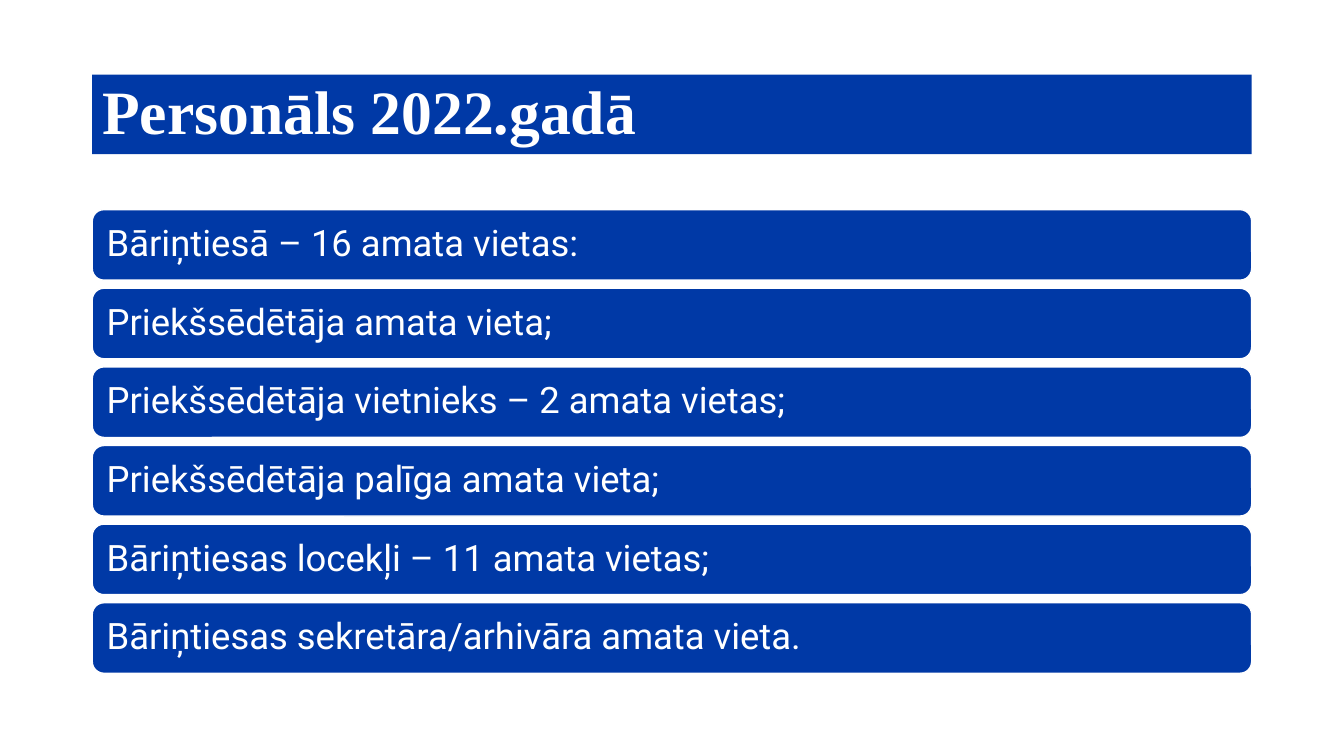
from pptx import Presentation
from pptx.dml.color import RGBColor
from pptx.enum.shapes import MSO_SHAPE
from pptx.enum.text import MSO_ANCHOR, PP_ALIGN
from pptx.util import Inches, Pt

# Content
TITLE = "Personāls 2022.gadā"
POSITIONS = [
    "Bāriņtiesā – 16 amata vietas:",
    "Priekšsēdētāja amata vieta;",
    "Priekšsēdētāja vietnieks – 2 amata vietas;",
    "Priekšsēdētāja palīga amata vieta;",
    "Bāriņtiesas locekļi – 11 amata vietas;",
    "Bāriņtiesas sekretāra/arhivāra amata vieta.",
]
COLORS = {"blue": "0039A6", "white": "FFFFFF"}

# Grid in inches
SLIDE_WIDTH, SLIDE_HEIGHT = 13.33, 7.5
BAR_WIDTH = 11.5
LEFT = (SLIDE_WIDTH - BAR_WIDTH) / 2
TITLE_TOP, TITLE_HEIGHT = 0.74, 0.79
FIRST_ROW, ROW_STEP, ROW_HEIGHT = 2.08, 0.78, 0.7


def color(name):
    return RGBColor.from_string(COLORS[name])


def add_bar(slide, kind, top, height, text, font, size, bold=False, inset=(0.1, 0.05)):
    shape = slide.shapes.add_shape(
        kind, Inches(LEFT), Inches(top), Inches(BAR_WIDTH), Inches(height))
    shape.shadow.inherit = False
    shape.fill.solid()
    shape.fill.fore_color.rgb = color("blue")
    shape.line.fill.background()

    frame = shape.text_frame
    frame.word_wrap = True
    frame.vertical_anchor = MSO_ANCHOR.MIDDLE
    frame.margin_left = frame.margin_right = Inches(inset[0])
    frame.margin_top = frame.margin_bottom = Inches(inset[1])
    paragraph = frame.paragraphs[0]
    paragraph.alignment = PP_ALIGN.LEFT
    paragraph.line_spacing = 0.9
    run = paragraph.add_run()
    run.text = text
    run.font.name = font
    run.font.size = Pt(size)
    run.font.bold = bold
    run.font.color.rgb = color("white")
    return shape


def main():
    presentation = Presentation()
    presentation.slide_width = Inches(SLIDE_WIDTH)
    presentation.slide_height = Inches(SLIDE_HEIGHT)
    slide = presentation.slides.add_slide(presentation.slide_layouts[6])

    # Title band
    add_bar(slide, MSO_SHAPE.RECTANGLE, TITLE_TOP, TITLE_HEIGHT,
            TITLE, "Times New Roman", 44, bold=True)

    # One rounded bar per position
    for row, text in enumerate(POSITIONS):
        bar = add_bar(slide, MSO_SHAPE.ROUNDED_RECTANGLE, FIRST_ROW + row * ROW_STEP,
                      ROW_HEIGHT, text, "Roboto", 26, inset=(0.11, 0.11))
        bar.line.color.rgb = color("white")
        bar.line.width = Pt(1)

    presentation.save("out.pptx")


if __name__ == "__main__":
    main()
